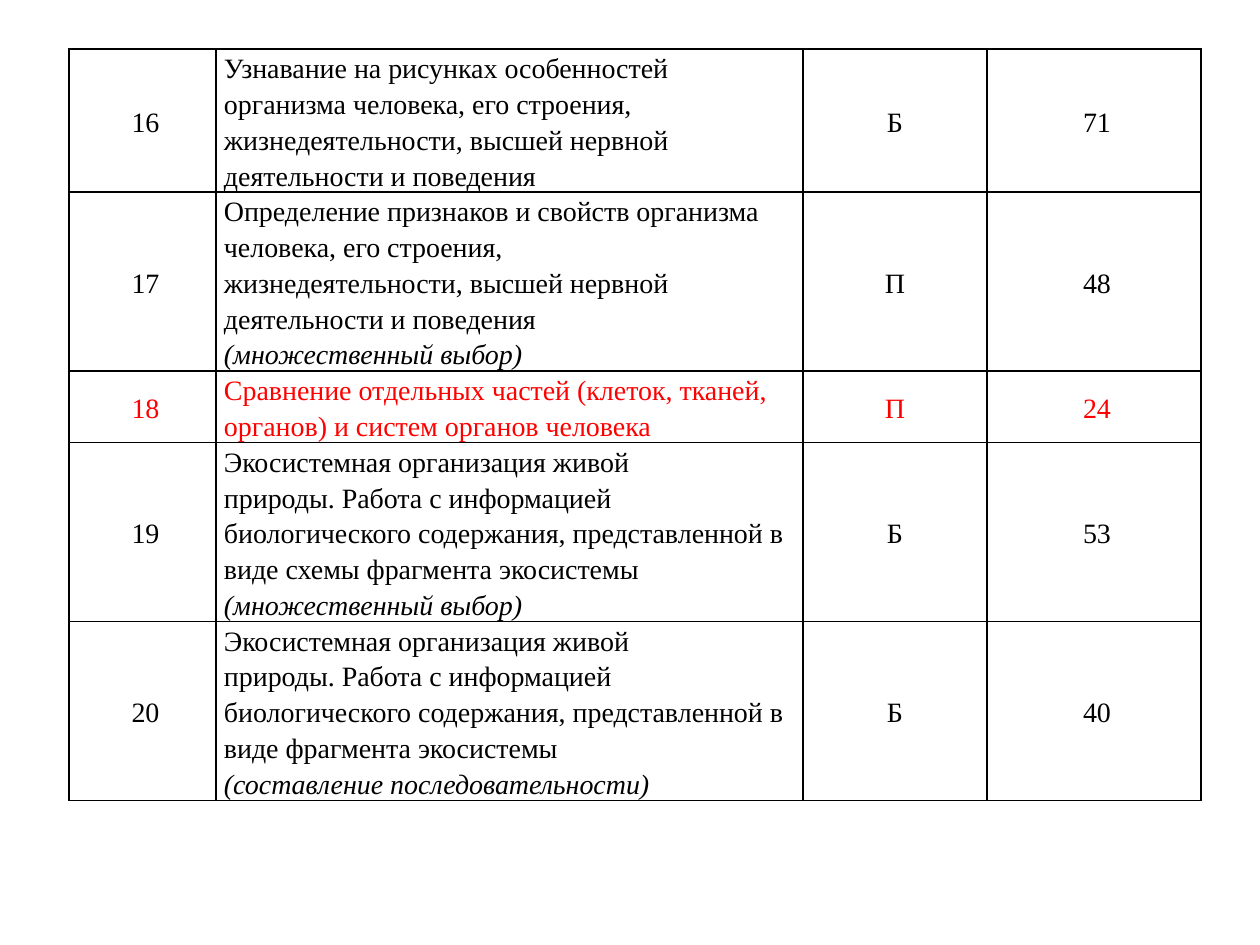
import pptx
import pptx.dml.color
import pptx.enum.text
import pptx.oxml
import pptx.oxml.ns
import pptx.util

SCALE = 914400 / 126
FONT = "Times New Roman"
BLACK, RED = "000000", "FF0000"
COLS = [147, 587, 184, 214]
SIGNS = [6, 0, 0, 6]
ECO = ["Экосистемная организация живой", "природы. Работа с информацией"]
MANY = "(множественный выбор)"
ROWS = [
    (97, BLACK, 0, "16", [
        "Узнавание на рисунках особенностей организма человека, его строения, "
        "жизнедеятельности, высшей нервной деятельности и поведения"], "Б", "71"),
    (122, BLACK, 0, "17", [
        "Определение признаков и свойств организма человека, его строения,",
        "жизнедеятельности, высшей нервной",
        "деятельности и поведения", MANY], "П", "48"),
    (49, RED, 0, "18", [
        "Сравнение отдельных частей (клеток, тканей, органов) "
        "и систем органов человека"], "П", "24"),
    (146, BLACK, -10, "19", ECO + [
        "биологического содержания, представленной в виде схемы фрагмента экосистемы",
        MANY], "Б", "53"),
    (146, BLACK, -10, "20", ECO + [
        "биологического содержания, представленной в виде фрагмента экосистемы",
        "(составление последовательности)"], "Б", "40"),
]


def px(n):
    """Turn pixels into EMU."""
    return pptx.util.Emu(round(n * SCALE))


def paint(hue):
    """Turn a hex string into a colour."""
    return pptx.dml.color.RGBColor.from_string(hue)


def frame(cell):
    """Give a cell thin black borders and no fill."""
    props = cell._tc.get_or_add_tcPr()
    for side in "LRTB":
        props.append(pptx.oxml.parse_xml(
            f'<a:ln{side} {pptx.oxml.ns.nsdecls("a")} w="12700"><a:solidFill>'
            f'<a:srgbClr val="{BLACK}"/></a:solidFill></a:ln{side}>'))
    cell.fill.background()


def write(cell, lines, hue, dent, mid):
    """Fill a cell with one paragraph per line, bracketed lines in italics."""
    cell.margin_left = cell.margin_right = px(8)
    cell.margin_top = cell.margin_bottom = 0
    cell.vertical_anchor = pptx.enum.text.MSO_ANCHOR.MIDDLE
    align = pptx.enum.text.PP_ALIGN
    body = cell.text_frame
    for i, line in enumerate(lines):
        para = body.add_paragraph() if i else body.paragraphs[0]
        para.alignment = align.CENTER if mid else align.LEFT
        para.line_spacing = 1.15
        if dent:
            para._p.get_or_add_pPr().set("indent", str(px(dent)))
        run = para.add_run()
        run.text = line
        run.font.name = FONT
        run.font.size = pptx.util.Pt(16)
        run.font.italic = line.startswith("(")
        run.font.color.rgb = paint(hue)


def results(slide, left, top):
    """Place the table of task results with its corner at left and top."""
    wide, high = sum(COLS), sum(row[0] for row in ROWS)
    table = slide.shapes.add_table(
        len(ROWS), len(COLS), px(left), px(top), px(wide), px(high)).table
    table.first_row = table.horz_banding = False
    for col, width in zip(table.columns, COLS):
        col.width = px(width)
    for r, (height, hue, shift, task, skill, level, score) in enumerate(ROWS):
        table.rows[r].height = px(height)
        for c, lines in enumerate([[task], skill, [level], [score]]):
            cell = table.cell(r, c)
            frame(cell)
            write(cell, lines, hue, shift if c == 2 else SIGNS[c], c != 1)


def main():
    """Build and save the slide."""
    deck = pptx.Presentation()
    deck.slide_width, deck.slide_height = px(1260), px(945)
    results(deck.slides.add_slide(deck.slide_layouts[6]), 69, 49)
    deck.save("out.pptx")


if __name__ == "__main__":
    main()
